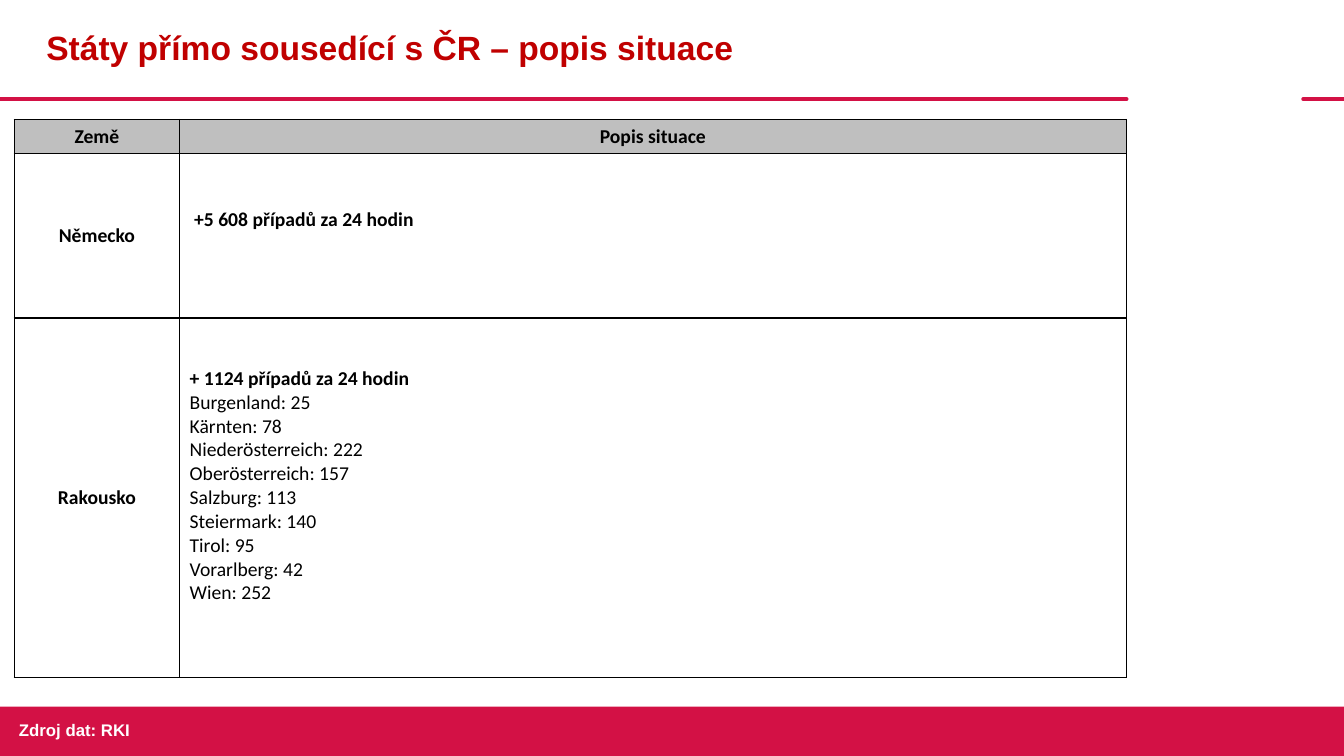
from lxml.etree import SubElement
from pptx import Presentation
from pptx.dml.color import RGBColor
from pptx.enum.shapes import MSO_CONNECTOR, MSO_SHAPE
from pptx.enum.text import MSO_ANCHOR, PP_ALIGN
from pptx.oxml.ns import qn
from pptx.util import Pt

CRIMSON = RGBColor(0xD3, 0x11, 0x45)
DARK_RED = RGBColor(0xC0, 0x00, 0x00)
GREY = RGBColor(0xBF, 0xBF, 0xBF)
BLACK = RGBColor(0x00, 0x00, 0x00)
WHITE = RGBColor(0xFF, 0xFF, 0xFF)

SLIDE_WIDTH, SLIDE_HEIGHT = 960, 540
RULE_TOP = 70.8
COLUMN_WIDTHS = (118.1, 676.2)
ROW_HEIGHTS = (24.3, 117.4, 257)
GERMANY = "+5 608 případů za 24 hodin"
AUSTRIA = (
    "+ 1124 případů za 24 hodin",
    "Burgenland: 25",
    "Kärnten: 78",
    "Niederösterreich: 222",
    "Oberösterreich: 157",
    "Salzburg: 113",
    "Steiermark: 140",
    "Tirol: 95",
    "Vorarlberg: 42",
    "Wien: 252",
)


def style_font(font, name, size, color, bold=True):
    """Set the typeface, size, colour and weight of a font."""
    font.name = name
    font.size = Pt(size)
    font.color.rgb = color
    font.bold = bold


def add_rule(page, left, right):
    """Draw one part of the rounded rule under the title."""
    rule = page.shapes.add_connector(
        MSO_CONNECTOR.STRAIGHT, Pt(left), Pt(RULE_TOP), Pt(right), Pt(RULE_TOP)
    )
    rule.line.color.rgb = CRIMSON
    rule.line.width = Pt(3)
    rule.line._get_or_add_ln().set("cap", "rnd")
    SubElement(rule._element.spPr, qn("a:effectLst"))


def add_footer_band(page):
    """Fill the bottom of the page with a red band."""
    top = 504.7
    band = page.shapes.add_shape(
        MSO_SHAPE.RECTANGLE, 0, Pt(top), Pt(SLIDE_WIDTH), Pt(SLIDE_HEIGHT - top)
    )
    band.shadow.inherit = False
    band.fill.solid()
    band.fill.fore_color.rgb = CRIMSON
    band.line.fill.background()


def add_text(page, text, bounds, size, color, anchor):
    """Add a text box with one bold Arial line."""
    box = page.shapes.add_textbox(*map(Pt, bounds))
    box.text_frame.word_wrap = True
    box.text_frame.vertical_anchor = anchor
    box.text_frame.text = text
    para = box.text_frame.paragraphs[0]
    style_font(para.runs[0].font, "Arial", size, color)
    return para


def border_cell(cell):
    """Give a cell thin black borders on all sides."""
    properties = cell._tc.get_or_add_tcPr()
    for position, side in enumerate(("lnL", "lnR", "lnT", "lnB")):
        line = SubElement(properties, qn(f"a:{side}"), w=str(Pt(1)))
        fill = SubElement(line, qn("a:solidFill"))
        SubElement(fill, qn("a:srgbClr"), val=str(BLACK))
        properties.remove(line)
        properties.insert(position, line)


def fill_cell(cell, lines, align, color=None):
    """Write lines into a cell, with only the first one bold."""
    cell.vertical_anchor = MSO_ANCHOR.MIDDLE
    if color is None:
        cell.fill.background()
    else:
        cell.fill.solid()
        cell.fill.fore_color.rgb = color
    border_cell(cell)
    cell.text_frame.text = "\n".join(lines)
    for index, para in enumerate(cell.text_frame.paragraphs):
        para.alignment = align
        style_font(para.runs[0].font, "Calibri", 14, BLACK, index == 0)


def add_situation_table(page):
    """Add the table of countries and their situation."""
    frame = page.shapes.add_table(
        len(ROW_HEIGHTS), len(COLUMN_WIDTHS), Pt(10.2), Pt(85.4),
        Pt(sum(COLUMN_WIDTHS)), Pt(sum(ROW_HEIGHTS)),
    )
    table = frame.table
    for column, width in zip(table.columns, COLUMN_WIDTHS):
        column.width = Pt(width)
    for row, height in zip(table.rows, ROW_HEIGHTS):
        row.height = Pt(height)
    for index, heading in enumerate(("Země", "Popis situace")):
        fill_cell(table.cell(0, index), [heading], PP_ALIGN.CENTER, GREY)
    for index, country in enumerate(("Německo", "Rakousko"), start=1):
        fill_cell(table.cell(index, 0), [country], PP_ALIGN.CENTER)

    germany = table.cell(1, 1)
    fill_cell(germany, [GERMANY], PP_ALIGN.JUSTIFY)
    germany.margin_left = Pt(10.4)
    germany.margin_bottom = Pt(21.6)
    para = germany.text_frame.paragraphs[0]
    para.line_spacing = Pt(12)
    para.space_after = Pt(6)

    austria = table.cell(2, 1)
    fill_cell(austria, AUSTRIA, PP_ALIGN.LEFT)
    austria.margin_bottom = Pt(20.6)


def main():
    """Build the slide and save it."""
    deck = Presentation()
    deck.slide_width = Pt(SLIDE_WIDTH)
    deck.slide_height = Pt(SLIDE_HEIGHT)
    page = deck.slides.add_slide(deck.slide_layouts[6])
    add_rule(page, 0, 804.6)
    add_rule(page, 931, SLIDE_WIDTH)
    add_footer_band(page)
    title = add_text(
        page, "Státy přímo sousedící s ČR – popis situace",
        (26, 0, 778.5, 70.5), 24, DARK_RED, MSO_ANCHOR.MIDDLE,
    )
    title.line_spacing = 0.9
    add_situation_table(page)
    add_text(
        page, "Zdroj dat: RKI", (6.5, 510.5, 609, 21.8), 12, WHITE, MSO_ANCHOR.TOP
    )
    deck.save("out.pptx")


if __name__ == "__main__":
    main()
